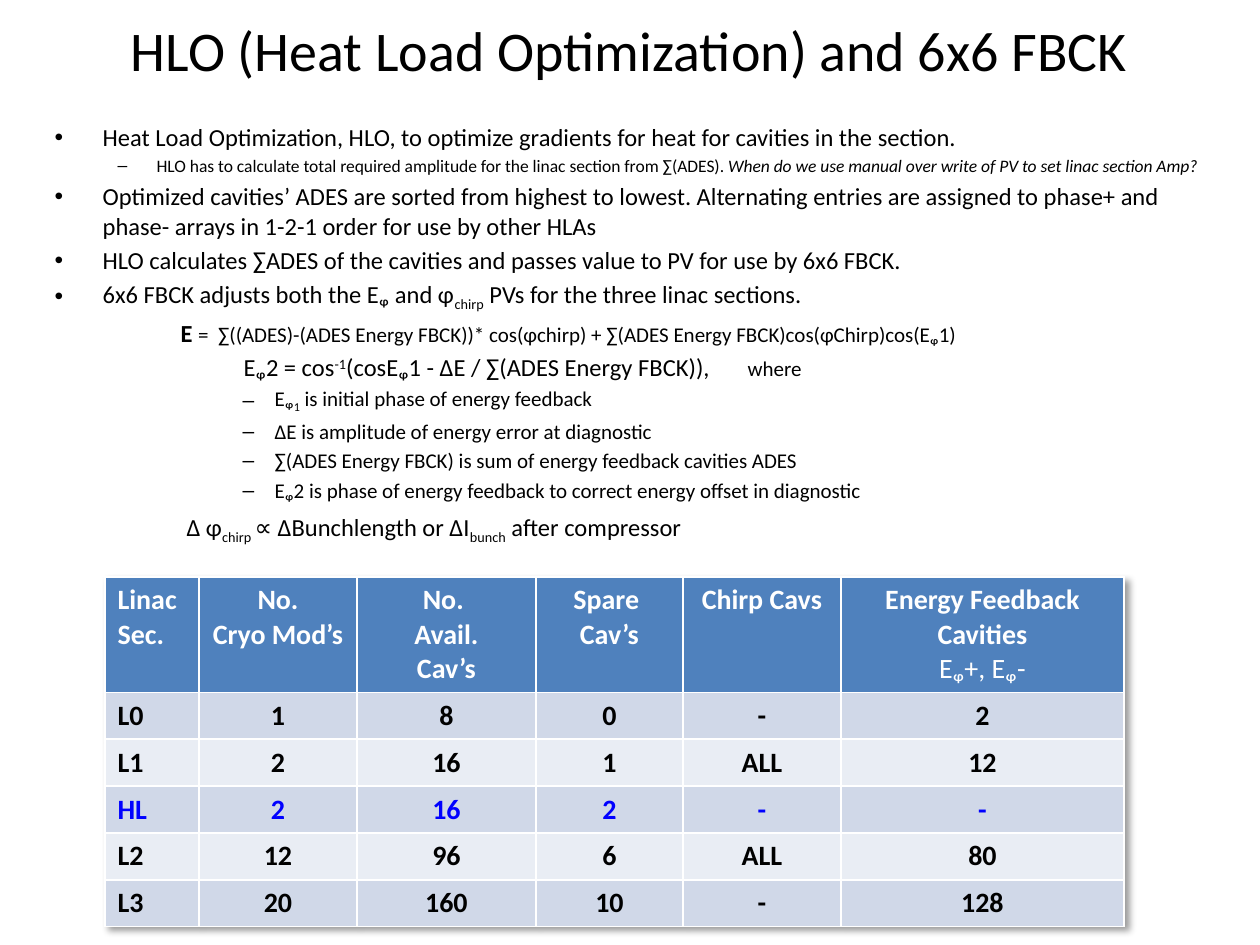
from lxml import etree
from pptx import Presentation
from pptx.dml.color import RGBColor
from pptx.enum.text import MSO_ANCHOR, MSO_AUTO_SIZE, PP_ALIGN
from pptx.oxml import parse_xml
from pptx.oxml.ns import qn
from pptx.util import Pt

PX = 9144000 // 1260  # 126 px to the inch
FONT = "Calibri"
BLACK, WHITE, BLUE = "000000", "FFFFFF", "0000FF"
HEADER_FILL, BANDS = "4F81BD", ("D0D8E8", "E9EDF4")

TITLE = "HLO (Heat Load Optimization) and 6x6 FBCK"
SUB, SUPER = {"baseline": -25}, {"baseline": 30}

# Kind of line: level, left margin px, first-line indent px, size, bulleted
STYLES = {
    "point": (0, 48, -48, 14, True),
    "note": (1, 102, -39, 10, True),
    "energy": (0, 126, 0, 12, False),
    "phase": (1, 189, 0, 14, False),
    "term": (3, 220, -32, 12, True),
    "chirp": (2, 132, 0, 14, False),
}
LINES = [
    ("point", ["Heat Load Optimization, HLO, to optimize gradients for heat for "
               "cavities in the section."]),
    ("note", ["HLO has to calculate total required amplitude for the linac section "
              "from ∑(ADES). ",
              ("When do we use manual over write of PV to set linac section Amp?",
               {"italic": True})]),
    ("point", ["Optimized cavities’ ADES are sorted from highest to lowest. "
               "Alternating entries are assigned to phase+ and phase- arrays in "
               "1-2-1 order for use by other HLAs"]),
    ("point", ["HLO calculates ∑ADES of the cavities and passes value to PV for "
               "use by 6x6 FBCK."]),
    ("point", ["6x6 FBCK adjusts both the Eᵩ and φ", ("chirp", SUB),
               " PVs for the three linac sections."]),
    ("energy", [("E ", {"bold": True, "size": 14}),
                "=  ∑((ADES)-(ADES Energy FBCK))* cos(φchirp) + "
                "∑(ADES Energy FBCK)cos(φChirp)cos(Eᵩ1)"]),
    ("phase", ["Eᵩ2 = cos", ("-1", SUPER), "(cosEᵩ1 - ∆E / ∑(ADES Energy FBCK)),",
               ("\twhere", {"size": 12})]),
    ("term", ["Eᵩ", ("1", SUB), " is initial phase of energy feedback"]),
    ("term", ["∆E is amplitude of energy error at diagnostic"]),
    ("term", ["∑(ADES Energy FBCK) is sum of energy feedback cavities ADES"]),
    ("term", ["Eᵩ2 is phase of energy feedback to correct energy offset in diagnostic"]),
    ("chirp", ["∆ φ", ("chirp ", SUB), "∝ ∆Bunchlength or ∆I", ("bunch", SUB),
               " after compressor"]),
]

COLUMNS = [94, 158, 179, 147, 158, 283]
HEADER_HEIGHT, ROW_HEIGHT = 112, 44
HEADER = ["Linac\nSec.", "No.\nCryo Mod’s", "No. \nAvail.\nCav’s", "Spare \nCav’s",
          "Chirp Cavs", "Energy Feedback Cavities\nEᵩ+, Eᵩ-"]
SECTIONS = [
    ["L0", "1", "8", "0", "-", "2"],
    ["L1", "2", "16", "1", "ALL", "12"],
    ["HL", "2", "16", "2", "-", "-"],
    ["L2", "12", "96", "6", "ALL", "80"],
    ["L3", "20", "160", "10", "-", "128"],
]
SHADOW = (
    '<a:effectLst xmlns:a="http://schemas.openxmlformats.org/drawingml/2006/main">'
    '<a:outerShdw blurRad="50800" dist="38100" dir="2700000" algn="tl" rotWithShape="0">'
    '<a:srgbClr val="000000"><a:alpha val="40000"/></a:srgbClr>'
    '</a:outerShdw></a:effectLst>')


def rgb(color):
    return RGBColor.from_string(color)


def set_font(font, size, color, bold=False):
    font.name, font.size, font.bold = FONT, Pt(size), bold
    font.color.rgb = rgb(color)


def place(shape, left, top, width, height):
    shape.left, shape.top = left * PX, top * PX
    shape.width, shape.height = width * PX, height * PX


def add_run(paragraph, part):
    text, look = (part, {}) if isinstance(part, str) else part
    run = paragraph.add_run()
    run.text = text
    if "size" in look:
        run.font.size = Pt(look["size"])
    if "bold" in look:
        run.font.bold = look["bold"]
    if "italic" in look:
        run.font.italic = look["italic"]
    if "baseline" in look:
        run._r.get_or_add_rPr().set("baseline", str(look["baseline"] * 1000))


def write_line(paragraph, kind, parts):
    level, margin, indent, size, bulleted = STYLES[kind]
    paragraph.level = level
    paragraph.alignment = PP_ALIGN.LEFT
    properties = paragraph._p.get_or_add_pPr()
    properties.set("marL", str(margin * PX))
    properties.set("indent", str(indent * PX))
    if kind == "chirp":
        paragraph.space_before = Pt(5.5)
    if not bulleted:
        etree.SubElement(properties, qn("a:buNone"))
    set_font(paragraph.font, size, BLACK)
    for part in parts:
        add_run(paragraph, part)


def fill_cell(cell, text, column, fill, color):
    cell.fill.solid()
    cell.fill.fore_color.rgb = rgb(fill)
    cell.text = text
    for paragraph in cell.text_frame.paragraphs:
        paragraph.alignment = PP_ALIGN.CENTER if column else PP_ALIGN.LEFT
        set_font(paragraph.font, 16, color, bold=not paragraph.text.startswith("Eᵩ"))


def main():
    deck = Presentation()
    deck.slide_width, deck.slide_height = 1260 * PX, 945 * PX
    slide = deck.slides.add_slide(deck.slide_layouts[1])

    # Title
    title = slide.shapes.title
    place(title, 10, 0, 1239, 98)
    title.text_frame.text = TITLE
    title.text_frame.vertical_anchor = MSO_ANCHOR.MIDDLE
    heading = title.text_frame.paragraphs[0]
    heading.alignment = PP_ALIGN.CENTER
    set_font(heading.font, 32, BLACK)

    # Explanation and formulas
    body = slide.placeholders[1]
    place(body, 42, 116, 1197, 410)
    frame = body.text_frame
    frame.auto_size = MSO_AUTO_SIZE.NONE
    for index, (kind, parts) in enumerate(LINES):
        paragraph = frame.add_paragraph() if index else frame.paragraphs[0]
        write_line(paragraph, kind, parts)

    # Table of linac sections
    height = HEADER_HEIGHT + ROW_HEIGHT * len(SECTIONS)
    table = slide.shapes.add_table(len(SECTIONS) + 1, len(COLUMNS), 105 * PX, 577 * PX,
                                   sum(COLUMNS) * PX, height * PX).table
    table._tbl.tblPr.insert(0, parse_xml(SHADOW))
    for column, width in zip(table.columns, COLUMNS):
        column.width = width * PX
    for row, values in enumerate([HEADER] + SECTIONS):
        table.rows[row].height = (ROW_HEIGHT if row else HEADER_HEIGHT) * PX
        fill = BANDS[(row - 1) % 2] if row else HEADER_FILL
        color = WHITE if row == 0 else BLUE if values[0] == "HL" else BLACK
        for column, text in enumerate(values):
            fill_cell(table.cell(row, column), text, column, fill, color)

    deck.save("out.pptx")


if __name__ == "__main__":
    main()
